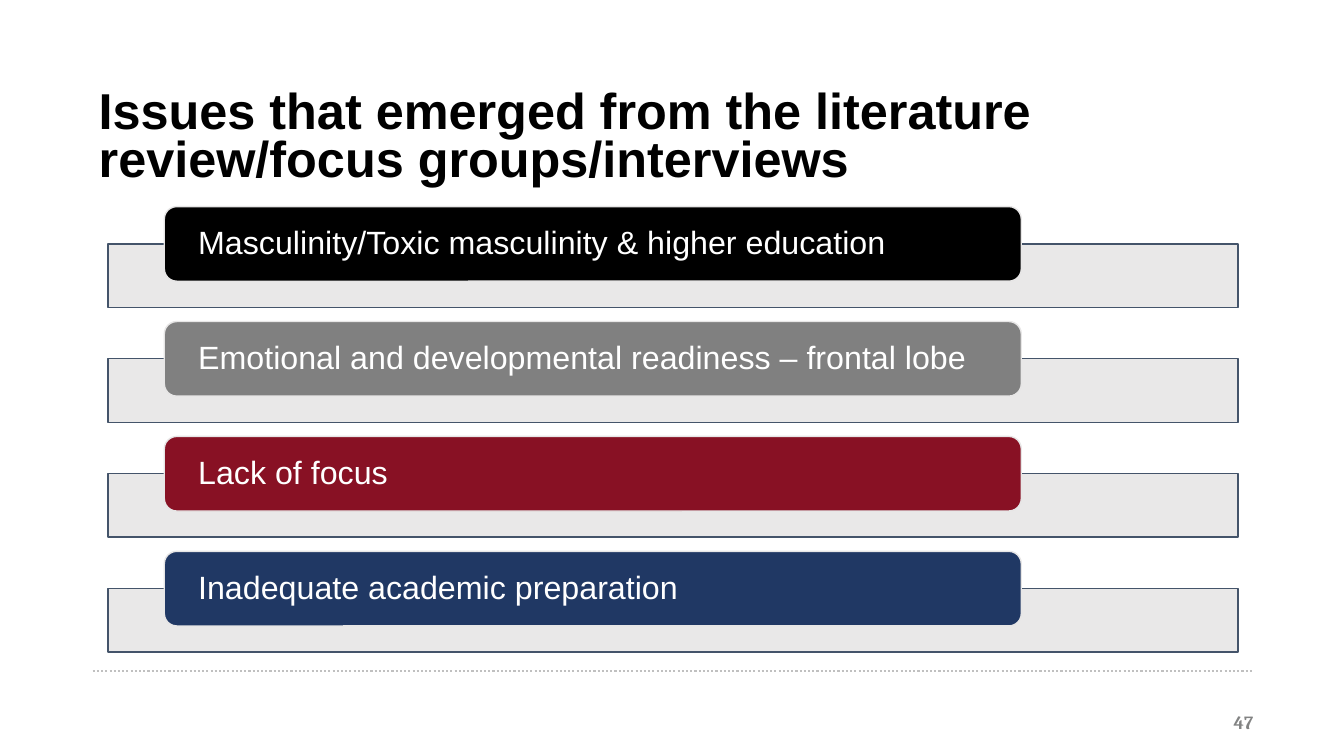
from dataclasses import dataclass

from pptx import Presentation
from pptx.dml.color import RGBColor
from pptx.enum import dml, shapes, text
from pptx.oxml.ns import qn
from pptx.util import Inches, Pt
from lxml import etree


@dataclass(frozen=True)
class Theme:
    black: str = "000000"
    white: str = "FFFFFF"
    gray: str = "808080"
    red: str = "881124"
    navy: str = "203864"
    band: str = "E7E6E6"
    band_edge: str = "44546A"
    rule: str = "C0C0C0"
    number: str = "828383"
    title_size: float = 36
    issue_size: float = 23
    number_size: float = 13.3


theme = Theme()
ISSUES = [
    ("Masculinity/Toxic masculinity & higher education", theme.black),
    ("Emotional and developmental readiness – frontal lobe", theme.gray),
    ("Lack of focus", theme.red),
    ("Inadequate academic preparation", theme.navy),
]
FIRST_TOP, PITCH = 2.05, 1.14


def write(holder, words, font, color, frame=None, paragraph=None):
    """Fill a shape with one paragraph, applying dicts of format values."""
    body = holder.text_frame
    body.word_wrap = True
    line = body.paragraphs[0]
    line.text = words
    for target, values in ((body, frame), (line, paragraph), (line.font, font)):
        for name, value in (values or {}).items():
            setattr(target, name, value)
    line.font.color.rgb = RGBColor.from_string(color)


def add_box(preset, left, top, width, height, fill, edge):
    box = slide.shapes.add_shape(
        preset, Inches(left), Inches(top), Inches(width), Inches(height))
    box.shadow.inherit = False
    box.fill.solid()
    box.fill.fore_color.rgb = RGBColor.from_string(fill)
    box.line.color.rgb = RGBColor.from_string(edge)
    box.line.width = Pt(1)
    return box


deck = Presentation()
deck.slide_width, deck.slide_height = Inches(13.33), Inches(7.5)
slide = deck.slides.add_slide(deck.slide_layouts[6])

footer_rule = slide.shapes.add_connector(
    shapes.MSO_CONNECTOR.STRAIGHT,
    Inches(0.92), Inches(6.66), Inches(12.42), Inches(6.66))
footer_rule.line.color.rgb = RGBColor.from_string(theme.rule)
footer_rule.line.width = Pt(1.5)
footer_rule.line.dash_style = dml.MSO_LINE.ROUND_DOT
etree.SubElement(footer_rule._element.spPr, qn("a:effectLst"))

page_number = slide.shapes.add_textbox(
    Inches(9.56), Inches(6.96), Inches(3), Inches(0.4))
write(page_number, "47",
      {"name": "Cambria", "size": Pt(theme.number_size), "bold": True}, theme.number,
      {"vertical_anchor": text.MSO_ANCHOR.MIDDLE,
       "margin_left": Inches(0.13), "margin_right": Inches(0.13),
       "margin_top": Inches(0.07), "margin_bottom": Inches(0.07)},
      {"alignment": text.PP_ALIGN.RIGHT})

title = slide.shapes.add_textbox(
    Inches(0.88), Inches(0.85), Inches(11.49), Inches(0.77))
write(title, "Issues that emerged from the literature review/focus groups/interviews",
      {"name": "Arial", "size": Pt(theme.title_size), "bold": True}, theme.black,
      paragraph={"line_spacing": 0.8})

for row, (issue, color) in enumerate(ISSUES):
    top = FIRST_TOP + row * PITCH
    band = add_box(shapes.MSO_SHAPE.RECTANGLE, 1.07, top + 0.37, 11.21, 0.63,
                   theme.band, theme.band_edge)
    band_color = band._element.spPr.find(qn("a:solidFill"))[0]
    etree.SubElement(band_color, qn("a:alpha"), val="90000")

    label = add_box(shapes.MSO_SHAPE.ROUNDED_RECTANGLE, 1.63, top, 8.5, 0.74,
                    color, theme.band)
    write(label, issue, {"name": "Arial", "size": Pt(theme.issue_size)}, theme.white,
          {"vertical_anchor": text.MSO_ANCHOR.MIDDLE,
           "margin_left": Inches(0.3), "margin_right": Inches(0.3),
           "margin_top": 0, "margin_bottom": 0},
          {"alignment": text.PP_ALIGN.LEFT, "line_spacing": 0.9})

deck.save("out.pptx")
